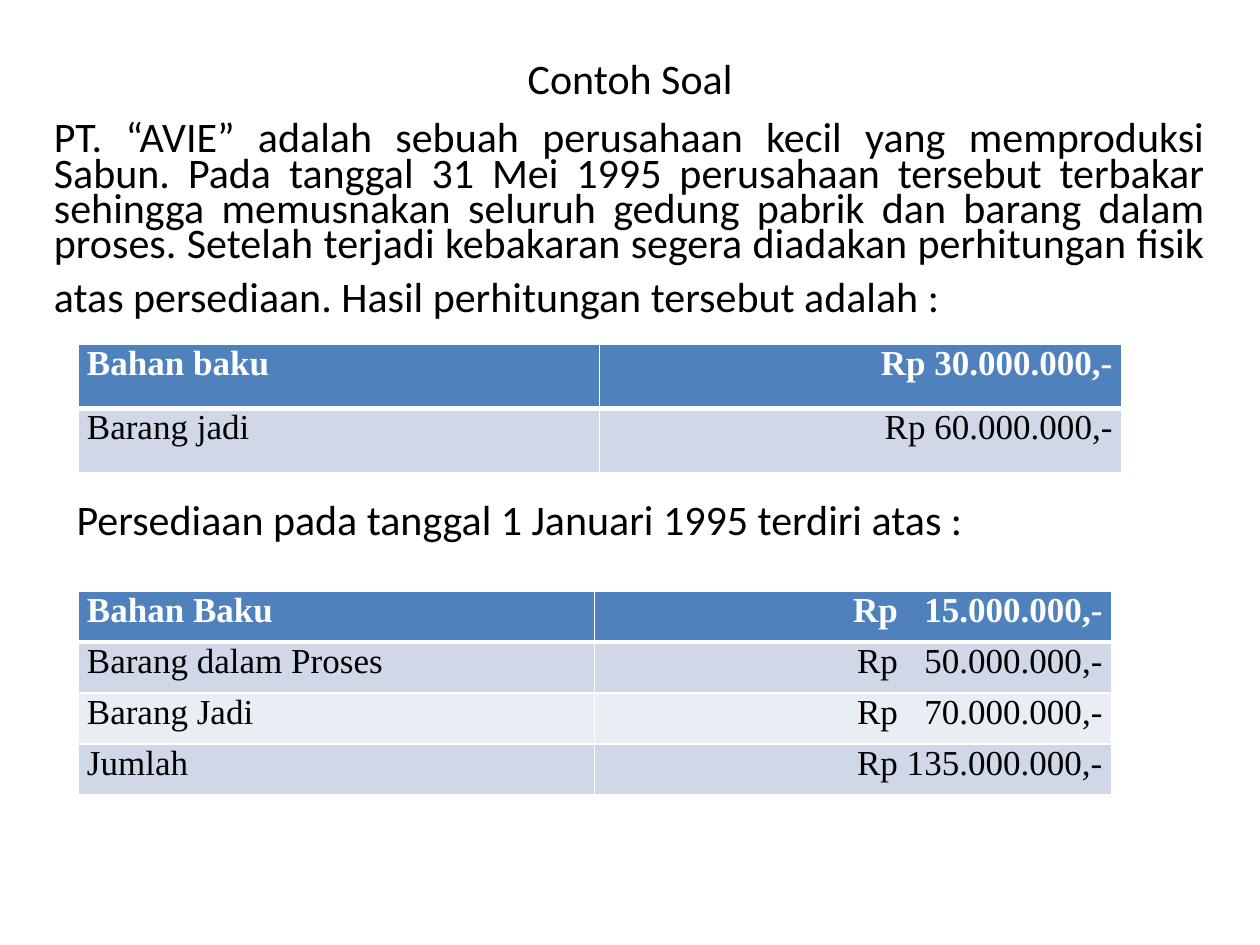
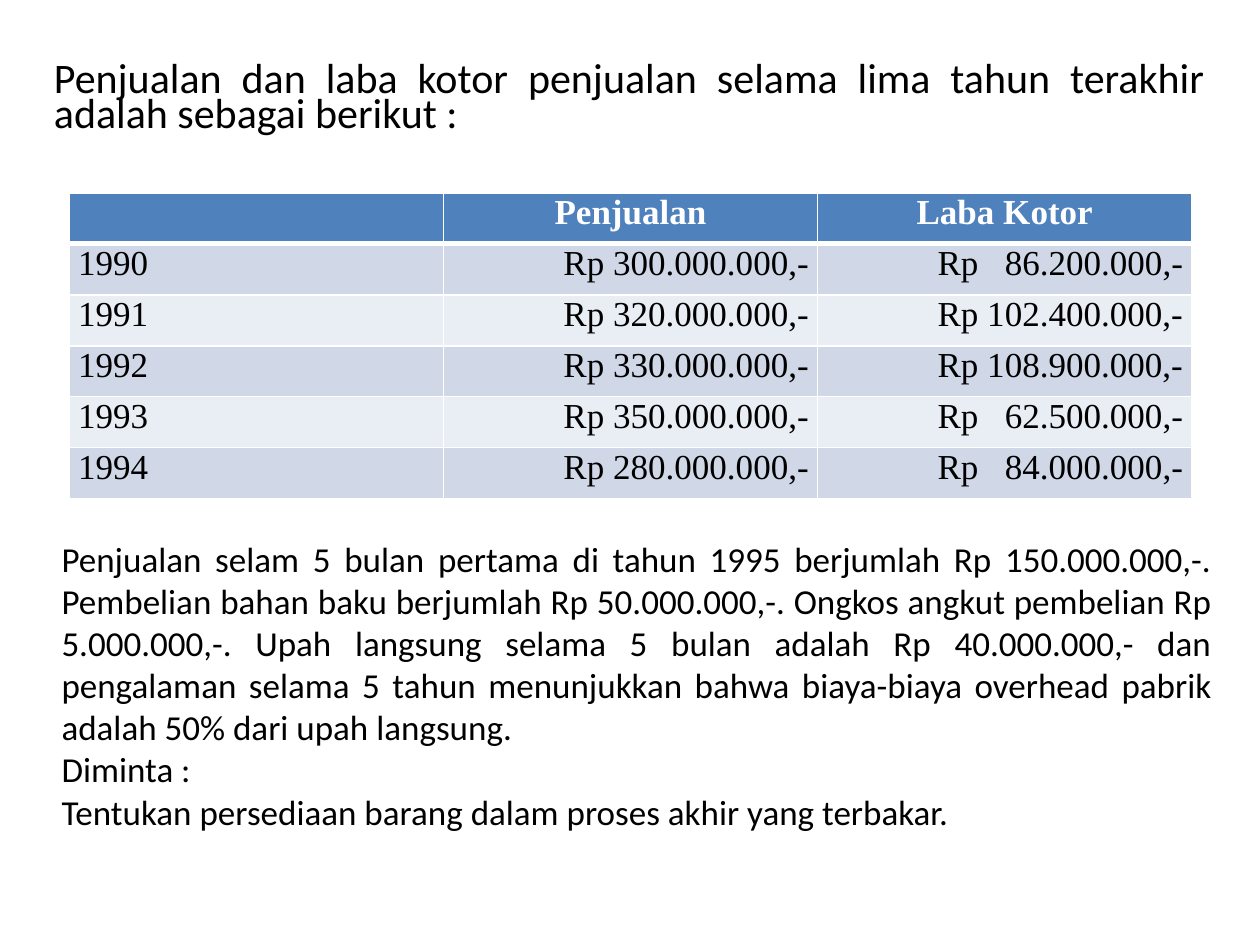
"""Build two slides of a cost accounting exercise on burnt inventory."""
from lxml.etree import SubElement
from pptx import Presentation
from pptx.dml.color import RGBColor
from pptx.enum.text import MSO_ANCHOR, MSO_AUTO_SIZE, PP_ALIGN as Align
from pptx.oxml.ns import qn
from pptx.util import Pt

SCALE = 9144
COLORS = {
    "text": "000000",
    "header": "4F81BD",
    "header_text": "FFFFFF",
    "odd_row": "D0D8E8",
    "even_row": "E9EDF4",
    "grid": "FFFFFF",
}
BODY_FONT = "Calibri"
TABLE_FONT = "Times New Roman"
TABLE_SIZE = 20
CURRENCY = "Rp"


def px(length):
    """Turn px into EMU."""
    return int(length * SCALE)


def add_run(paragraph, text, size, font=BODY_FONT, color="text", bold=False):
    """Append one formatted run and return it."""
    run = paragraph.add_run()
    run.text = text
    run.font.size = Pt(size)
    run.font.name = font
    run.font.bold = bold
    run.font.color.rgb = RGBColor.from_string(COLORS[color])
    return run


def add_title(slide, text, left, top, width, height):
    """Place and fill the title placeholder."""
    title = slide.shapes.title
    title.left, title.top, title.width, title.height = map(px, (left, top, width, height))
    title.text_frame.vertical_anchor = MSO_ANCHOR.MIDDLE
    heading = title.text_frame.paragraphs[0]
    heading.alignment = Align.CENTER
    add_run(heading, text, 24)


def add_justified_box(slide, left, top, width, height):
    """Add a wrapping text box and return its text frame."""
    frame = slide.shapes.add_textbox(*map(px, (left, top, width, height))).text_frame
    frame.word_wrap = True
    frame.auto_size = MSO_AUTO_SIZE.SHAPE_TO_FIT_TEXT
    return frame


def add_lead(slide, text, left, top, width, height, tall_end=False):
    """Add a tightly set lead paragraph, optionally with a tall last line."""
    lead = add_justified_box(slide, left, top, width, height).paragraphs[0]
    lead.alignment = Align.JUSTIFY
    lead.line_spacing = 0.7
    lead.space_before = Pt(12)
    spacing = lead._p.pPr.find(qn("a:spcBef"))
    spacing.clear()
    SubElement(spacing, qn("a:spcPct"), val="50000")
    add_run(lead, text, 24)
    if tall_end:
        add_run(lead, "\t", 40, TABLE_FONT)


def add_body(slide, texts, left, top, width, height):
    """Add justified body paragraphs."""
    frame = add_justified_box(slide, left, top, width, height)
    for index, text in enumerate(texts):
        paragraph = frame.add_paragraph() if index else frame.paragraphs[0]
        paragraph.alignment = Align.JUSTIFY
        add_run(paragraph, text, 20)


def set_borders(cell, top, bottom):
    """Draw white cell borders with the given top and bottom widths."""
    properties = cell._tc.get_or_add_tcPr()
    for side, width in (("L", 1), ("R", 1), ("T", top), ("B", bottom)):
        line = SubElement(properties, qn(f"a:ln{side}"), w=str(Pt(width)))
        fill = SubElement(line, qn("a:solidFill"))
        SubElement(fill, qn("a:srgbClr"), val=COLORS["grid"])


def add_amount(paragraph, amount, missing_digits, **style):
    """Write a rupiah amount, widening its gap by the missing digits."""
    add_run(paragraph, CURRENCY, TABLE_SIZE, **style)
    gap = add_run(paragraph, " ", TABLE_SIZE, **style)
    if missing_digits:
        gap.font._element.set("spc", str(missing_digits * TABLE_SIZE * 50))
    add_run(paragraph, amount, TABLE_SIZE, **style)


def add_ledger(slide, rows, left, top, width, height):
    """Add a banded table with labels on the left and rupiah amounts."""
    table = slide.shapes.add_table(
        len(rows), len(rows[0]), *map(px, (left, top, width, height))).table
    amount_widths = [max(map(len, column)) for column in zip(*rows)]
    for row_index, row in enumerate(rows):
        is_header = row_index == 0
        band = "header" if is_header else ("even_row", "odd_row")[row_index % 2]
        style = {"font": TABLE_FONT, "bold": is_header,
                 "color": "header_text" if is_header else "text"}
        for column_index, text in enumerate(row):
            cell = table.cell(row_index, column_index)
            cell.margin_left = cell.margin_right = px(7)
            cell.margin_top = cell.margin_bottom = 0
            set_borders(cell, 3 if row_index == 1 else 1, 3 if is_header else 1)
            cell.fill.solid()
            cell.fill.fore_color.rgb = RGBColor.from_string(COLORS[band])
            paragraph = cell.text_frame.paragraphs[0]
            paragraph.space_after = Pt(6)
            if column_index and text.endswith(",-"):
                paragraph.alignment = Align.RIGHT
                add_amount(paragraph, text, amount_widths[column_index] - len(text), **style)
            elif text:
                paragraph.alignment = Align.CENTER if column_index else Align.LEFT
                add_run(paragraph, text, TABLE_SIZE, **style)


def build_inventory_slide(deck):
    """Build the slide with the counted and the opening inventory."""
    slide = deck.slides.add_slide(deck.slide_layouts[5])
    add_title(slide, "Contoh Soal", 50, 30, 900, 64)
    add_lead(
        slide,
        "PT. “AVIE” adalah sebuah perusahaan kecil yang memproduksi Sabun. "
        "Pada tanggal 31 Mei 1995 perusahaan tersebut terbakar sehingga memusnakan "
        "seluruh gedung pabrik dan barang dalam proses. Setelah terjadi kebakaran "
        "segera diadakan perhitungan fisik atas persediaan. Hasil perhitungan "
        "tersebut adalah : ",
        33, 94, 933, 170, tall_end=True)
    counted = [("Bahan baku", "30.000.000,-"), ("Barang jadi", "60.000.000,-")]
    add_ledger(slide, counted, 62, 273, 828, 102)
    add_lead(slide, "Persediaan pada tanggal 1 Januari 1995 terdiri atas : ",
             51, 383, 933, 57, tall_end=True)
    opening = [
        ("Bahan Baku", "15.000.000,-"),
        ("Barang dalam Proses", "50.000.000,-"),
        ("Barang Jadi", "70.000.000,-"),
        ("Jumlah", "135.000.000,-"),
    ]
    add_ledger(slide, opening, 62, 469, 820, 162)


def build_sales_slide(deck):
    """Build the slide with five years of sales and the question."""
    slide = deck.slides.add_slide(deck.slide_layouts[6])
    add_lead(slide,
             "Penjualan dan laba kotor penjualan selama lima tahun terakhir "
             "adalah sebagai berikut :",
             33, 47, 933, 68)
    sales = [
        ("", "Penjualan", "Laba Kotor"),
        ("1990", "300.000.000,-", "86.200.000,-"),
        ("1991", "320.000.000,-", "102.400.000,-"),
        ("1992", "330.000.000,-", "108.900.000,-"),
        ("1993", "350.000.000,-", "62.500.000,-"),
        ("1994", "280.000.000,-", "84.000.000,-"),
    ]
    add_ledger(slide, sales, 55, 153, 891, 243)
    question = [
        "Penjualan selam 5 bulan pertama di tahun 1995 berjumlah Rp 150.000.000,-. "
        "Pembelian bahan baku berjumlah Rp 50.000.000,-. Ongkos angkut pembelian "
        "Rp 5.000.000,-. Upah langsung selama 5 bulan adalah Rp 40.000.000,- dan "
        "pengalaman selama 5 tahun menunjukkan bahwa biaya-biaya overhead pabrik "
        "adalah 50% dari upah langsung.",
        "Diminta :",
        "Tentukan persediaan barang dalam proses akhir yang terbakar.",
    ]
    add_body(slide, question, 39, 422, 933, 294)


def main():
    """Build and save the deck."""
    deck = Presentation()
    deck.slide_width, deck.slide_height = px(1000), px(750)
    build_inventory_slide(deck)
    build_sales_slide(deck)
    deck.save("out.pptx")


if __name__ == "__main__":
    main()
